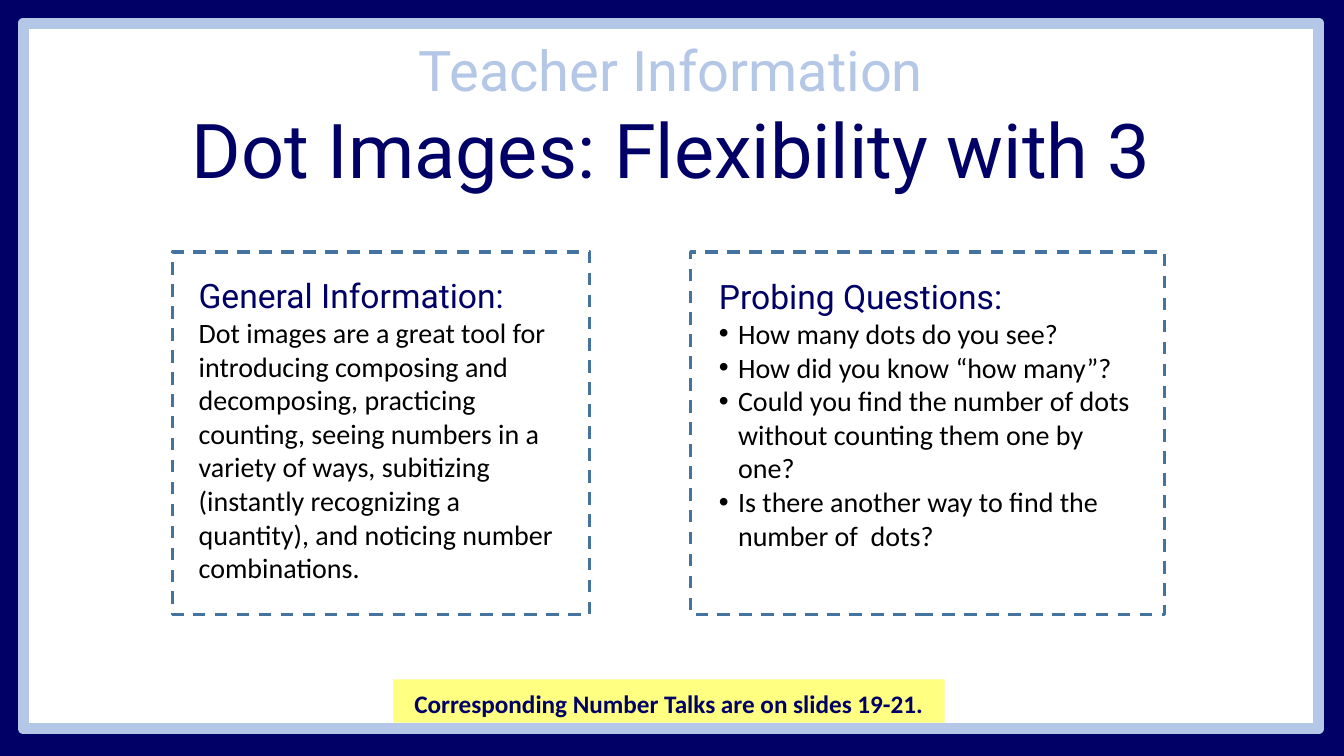
"""Build the teacher information slide on dot images."""
from lxml import etree
from pptx import Presentation
from pptx.dml.color import RGBColor
from pptx.enum import dml, shapes, text
from pptx.oxml import ns
from pptx.util import Inches, Pt

NAVY = RGBColor(0x00, 0x00, 0x66)
PALE = RGBColor(0xB4, 0xC7, 0xE7)
STEEL = RGBColor(0x43, 0x73, 0x9E)
YELLOW = RGBColor(0xFF, 0xFF, 0x81)
WHITE = RGBColor(0xFF, 0xFF, 0xFF)
BLACK = RGBColor(0x00, 0x00, 0x00)
RECT = shapes.MSO_SHAPE.RECTANGLE

deck = Presentation()
deck.slide_width, deck.slide_height = Inches(13.33), Inches(7.5)
slide = deck.slides.add_slide(deck.slide_layouts[3])
slide.background.fill.solid()
slide.background.fill.fore_color.rgb = NAVY


def add_box(left, top, width, height, fill=None, line=None, weight=0):
    box = slide.shapes.add_shape(
        RECT, Inches(left), Inches(top), Inches(width), Inches(height))
    box.shadow.inherit = False
    if fill is None:
        box.fill.background()
    else:
        box.fill.solid()
        box.fill.fore_color.rgb = fill
    if line is None:
        box.line.fill.background()
    else:
        box.line.color.rgb = line
        box.line.width = Pt(weight)
    return box


def add_run(para, words, size, font, color, bold=False):
    para.space_before = para.space_after = Pt(0)
    run = para.add_run()
    run.text = words
    run.font.size = Pt(size)
    run.font.name = font
    run.font.color.rgb = color
    run.font.bold = bold


title = slide.shapes.title
frame = add_box(0.23, 0.23, 12.85, 7, WHITE, PALE, 8)
title.element.addprevious(frame.element)

banner = add_box(3.9, 6.74, 5.47, 0.43, YELLOW)
banner.text_frame.margin_bottom = 0
note = banner.text_frame.paragraphs[0]
note.alignment = text.PP_ALIGN.CENTER
add_run(note, "Corresponding Number Talks are on slides 19-21.",
        18, "Calibri", NAVY, True)

panels = slide.placeholders[1], slide.placeholders[2]
spots = [(0.23, 0.3, 12.85, 1.68), (1.87, 2.68, 3.93, 3.2),
         (7.03, 2.69, 4.35, 2.86)]
for holder, spot in zip((title, *panels), spots):
    holder.left, holder.top, holder.width, holder.height = map(Inches, spot)
    holder.text_frame.word_wrap = True
    holder.text_frame.auto_size = text.MSO_AUTO_SIZE.NONE
    holder.text_frame.vertical_anchor = text.MSO_ANCHOR.TOP

head = title.text_frame.paragraphs[0]
add_run(head, "Teacher Information", 40, "Roboto", PALE)
topic = title.text_frame.add_paragraph()
add_run(topic, "Dot Images: Flexibility with 3", 54, "Roboto", NAVY)
for para in (head, topic):
    para.alignment = text.PP_ALIGN.CENTER

about = ["Dot images are a great tool for introducing composing and "
         "decomposing, practicing counting, seeing numbers in a variety of "
         "ways, subitizing (instantly recognizing a quantity), and noticing "
         "number combinations."]
asks = ["How many dots do you see?",
        "How did you know “how many”?",
        "Could you find the number of dots without counting them one by one?",
        "Is there another way to find the number of  dots?"]
contents = [("General Information:", about, False),
            ("Probing Questions:", asks, True)]
for panel, (heading, lines, listed) in zip(panels, contents):
    body = panel.text_frame
    add_run(body.paragraphs[0], heading, 24, "Roboto", NAVY)
    for line in lines:
        add_run(body.add_paragraph(), line, 20, "Calibri", BLACK)
    for spot, para in enumerate(body.paragraphs):
        bullet = listed and spot > 0
        indent = Inches(0.19) if bullet else 0
        props = para._p.get_or_add_pPr()
        props.set("marL", str(indent))
        props.set("indent", str(-indent))
        if bullet:
            font = etree.SubElement(props, ns.qn("a:buFont"))
            font.set("typeface", "Arial")
            mark = etree.SubElement(props, ns.qn("a:buChar"))
            mark.set("char", "•")
        else:
            etree.SubElement(props, ns.qn("a:buNone"))

for left, width in ((1.71, 4.14), (6.85, 4.7)):
    border = add_box(left, 2.5, width, 3.6, line=STEEL, weight=2.25)
    border.line.dash_style = dml.MSO_LINE.DASH

deck.save("out.pptx")
